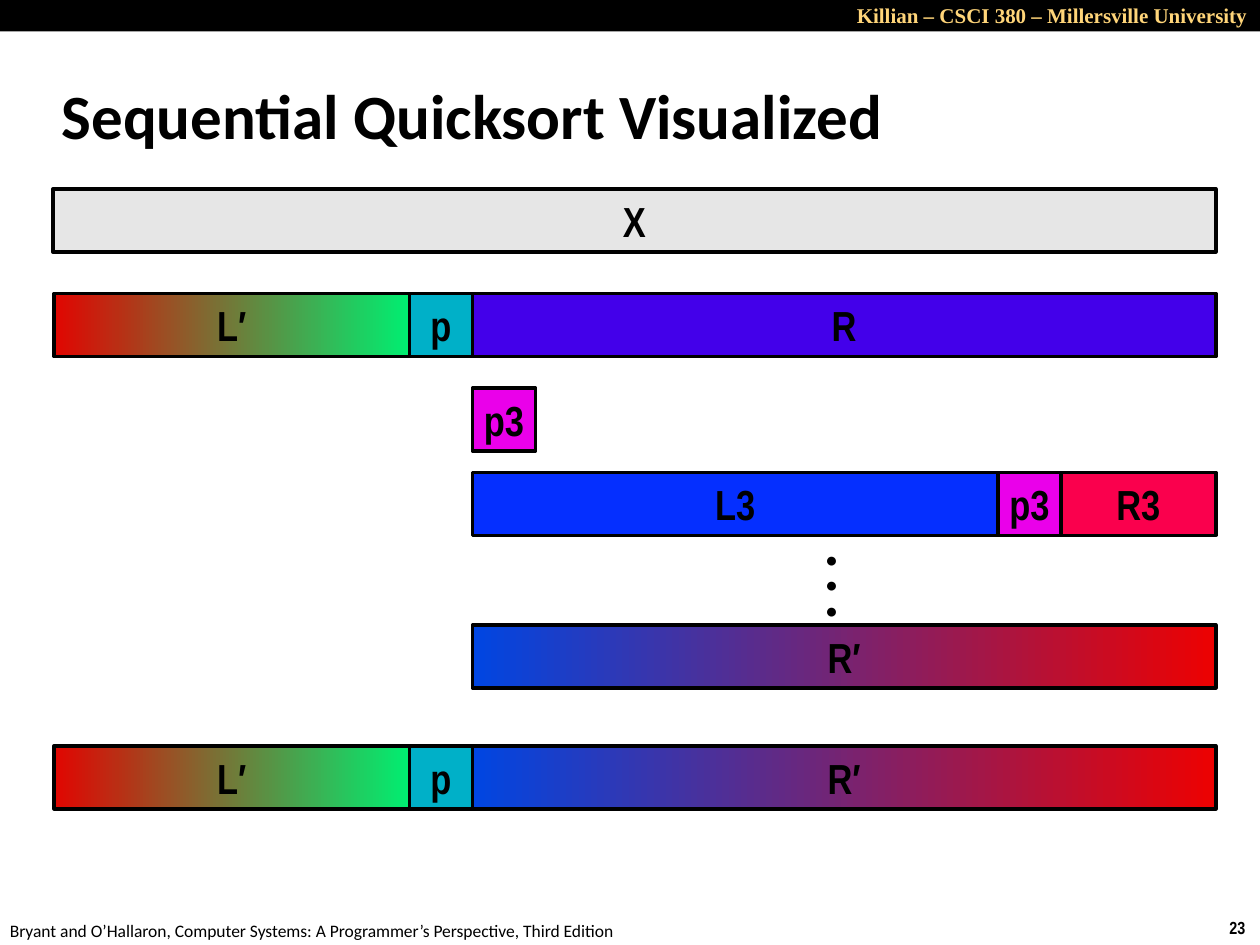
from pptx import Presentation
from pptx import util as u
from pptx.dml import color
from pptx.enum import shapes, text

COLORS = {
    "black": "000000", "gold": "FFD579", "array": "E6E6E6",
    "pivot": "00B0C8", "right": "4300EA", "pivot3": "EA00EA",
    "left3": "052FFF", "right3": "FA004D",
    "red": "E10601", "green": "00EE71", "blue": "0046E2", "scarlet": "ED0101",
}
SORTED_LEFT = ("red", "green")
SORTED_RIGHT = ("blue", "scarlet")
LEFT, PIVOT, RIGHT = (0.43, 2.82), (3.25, 0.5), (3.75, 5.9)
BAR_HEIGHT = 0.5


def rgb(name):
    return color.RGBColor.from_string(COLORS[name])


class QuicksortSlide:
    """Draws the elements of the quicksort slide in one style."""

    def __init__(self, slide):
        self.slide = slide

    def format(self, frame, size, font, bold=True, ink="black",
               align=text.PP_ALIGN.LEFT):
        for paragraph in frame.paragraphs:
            paragraph.alignment = align
            for run in paragraph.runs:
                run.font.size = u.Pt(size)
                run.font.name = font
                run.font.bold = bold
                run.font.color.rgb = rgb(ink)

    def title(self, words, left, top, width, height):
        heading = self.slide.shapes.title
        heading.left, heading.top = u.Inches(left), u.Inches(top)
        heading.width, heading.height = u.Inches(width), u.Inches(height)
        frame = heading.text_frame
        frame.text = words
        frame.vertical_anchor = text.MSO_ANCHOR.MIDDLE
        self.format(frame, 36, "Calibri")

    def label(self, words, left, top, width, height, size, font,
              wrap=False, **style):
        box = self.slide.shapes.add_textbox(
            u.Inches(left), u.Inches(top), u.Inches(width), u.Inches(height))
        frame = box.text_frame
        frame.word_wrap = wrap
        frame.text = words
        self.format(frame, size, font, **style)

    def rectangle(self, left, top, width, height, fill):
        shape = self.slide.shapes.add_shape(
            shapes.MSO_SHAPE.RECTANGLE, u.Inches(left), u.Inches(top),
            u.Inches(width), u.Inches(height))
        shape.shadow.inherit = False
        if isinstance(fill, tuple):
            shape.fill.gradient()
            shape.fill.gradient_angle = 0
            for stop, position, name in zip(
                    shape.fill.gradient_stops, (0, 1), fill):
                stop.position = position
                stop.color.rgb = rgb(name)
        else:
            shape.fill.solid()
            shape.fill.fore_color.rgb = rgb(fill)
        return shape

    def banner(self, words):
        band = self.rectangle(0, 0, 10, 0.25, "black")
        band.line.fill.background()
        self.label(words, 4.5, -0.03, 5.5, 0.3, 12, "Times New Roman",
                   wrap=True, ink="gold", align=text.PP_ALIGN.RIGHT)

    def segment(self, words, span, top, fill):
        left, width = span
        bar = self.rectangle(left, top, width, BAR_HEIGHT, fill)
        bar.line.color.rgb = rgb("black")
        bar.line.width = u.Pt(2)
        frame = bar.text_frame
        frame.word_wrap = False
        frame.vertical_anchor = text.MSO_ANCHOR.MIDDLE
        frame.text = words
        self.format(frame, 24, "Arial Narrow", align=text.PP_ALIGN.CENTER)


def main():
    deck = Presentation()
    deck.slide_width, deck.slide_height = u.Inches(10), u.Inches(7.5)
    page = QuicksortSlide(deck.slides.add_slide(deck.slide_layouts[5]))

    page.label("23", 9.66, 7.23, 0.34, 0.27, 10, "Arial Narrow")
    page.label("Bryant and O’Hallaron, Computer Systems: "
               "A Programmer’s Perspective, Third Edition",
               -0.02, 7.25, 5.08, 0.27, 10, "Calibri", bold=False)
    page.banner("Killian – CSCI 380 – Millersville University")
    page.title("Sequential Quicksort Visualized", 0.39, 0.49, 8.3, 0.83)

    page.label("•\n•\n•", 6.46, 4.29, 0.28, 0.71, 12, "Calibri")
    segments = [
        ("X", (0.42, 9.23), 1.5, "array"),
        ("p", PIVOT, 2.33, "pivot"),
        ("R", RIGHT, 2.33, "right"),
        ("L′", LEFT, 2.33, SORTED_LEFT),
        ("p3", (3.75, 0.5), 3.08, "pivot3"),
        ("L3", (3.75, 4.17), 3.75, "left3"),
        ("R3", (8.42, 1.23), 3.75, "right3"),
        ("p3", (7.92, 0.5), 3.75, "pivot3"),
        ("R′", RIGHT, 4.96, SORTED_RIGHT),
        ("p", PIVOT, 5.92, "pivot"),
        ("L′", LEFT, 5.92, SORTED_LEFT),
        ("R′", RIGHT, 5.92, SORTED_RIGHT),
    ]
    for words, span, top, fill in segments:
        page.segment(words, span, top, fill)

    deck.save("out.pptx")


if __name__ == "__main__":
    main()
